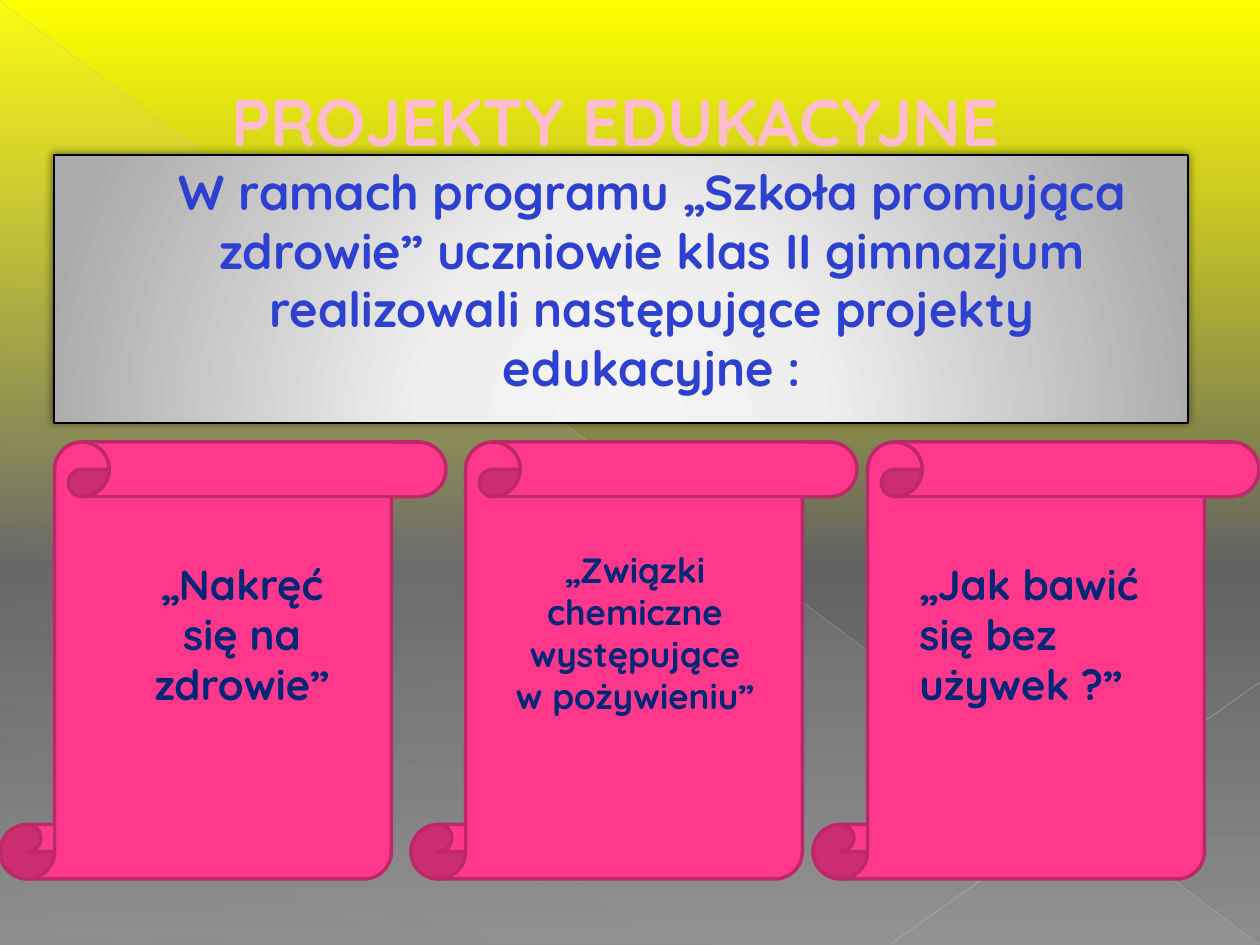
from dataclasses import dataclass

from pptx import Presentation, util as u
from pptx.dml.color import RGBColor
from pptx.enum import shapes, text
from pptx.oxml import parse_xml
from pptx.oxml.ns import nsdecls, qn

EMU_PER_PX = u.Inches(1) / 126
FONT = "Quicksand"
COLORS = {
    "title": "FFBCCE", "intro": "2D40CF", "label": "002776",
    "scroll": "FF388C", "scroll_edge": "BD2968", "black": "000000",
    "yellow": "FFFF00", "dark": "626262", "gray": "8C8C8C",
    "glow": "F4F4F4", "pale": "EFEFEF", "silver": "ABABAB",
    "wash": "D2D2D2", "ray": "BFBFBF", "ray_light": "C6C6C6",
}


@dataclass
class Box:
    left: int
    top: int
    width: int
    height: int

    def emu(self) -> tuple:
        return tuple(px(n) for n in (self.left, self.top, self.width, self.height))


@dataclass
class Stop:
    position: int
    color: str
    alpha: int = 100


@dataclass
class Project:
    scroll_left: int
    label: Box
    lines: list[str]
    size: int
    align: text.PP_ALIGN = text.PP_ALIGN.CENTER


@dataclass
class Ray:
    start: tuple[int, int]
    end: tuple[int, int]
    color: str
    alpha: int


RAYS = [
    Ray((0, 1), (1259, 944), "ray", 35),
    Ray((1260, 682), (891, 944), "ray_light", 45),
]
PROJECTS = [
    Project(0, Box(123, 552, 238, 165), ["„Nakręć się na zdrowie”"], 24),
    Project(411, Box(501, 542, 268, 224),
            ["„Związki chemiczne występujące", "w pożywieniu”"], 20),
    Project(813, Box(907, 552, 277, 165), ["„Jak bawić się bez używek ?”"], 24,
            text.PP_ALIGN.LEFT),
]


def px(length: int) -> u.Emu:
    return u.Emu(round(length * EMU_PER_PX))


def rgb(name: str) -> RGBColor:
    return RGBColor.from_string(COLORS[name])


def set_gradient(fill, properties, stops: list[Stop], direction: str) -> None:
    """Put a gradient in place of the fill held by the properties element."""
    fill.solid()
    fill.fore_color.rgb = rgb(stops[0].color)
    stop_xml = "".join(
        f'<a:gs pos="{stop.position * 1000}"><a:srgbClr val="{COLORS[stop.color]}">'
        f'<a:alpha val="{stop.alpha * 1000}"/></a:srgbClr></a:gs>' for stop in stops)
    gradient = parse_xml(f'<a:gradFill {nsdecls("a")} rotWithShape="1">'
                         f'<a:gsLst>{stop_xml}</a:gsLst>{direction}</a:gradFill>')
    solid = properties.find(qn("a:solidFill"))
    properties.replace(solid, gradient)


def linear(degrees: int) -> str:
    return f'<a:lin ang="{degrees * 60000}" scaled="0"/>'


def write(frame, lines: list[str], size: float, color: str,
          align=text.PP_ALIGN.CENTER) -> None:
    frame.word_wrap = True
    frame.text = "\n".join(lines)
    for paragraph in frame.paragraphs:
        paragraph.alignment = align
        for run in paragraph.runs:
            run.font.name = FONT
            run.font.size = u.Pt(size)
            run.font.bold = True
            run.font.color.rgb = rgb(color)


def add_shape(slide, kind, box: Box):
    shape = slide.shapes.add_shape(kind, *box.emu())
    shape.shadow.inherit = False
    return shape


def add_backdrop(slide) -> None:
    fill = slide.background.fill
    fill.solid()
    set_gradient(fill, slide.element.find(".//" + qn("p:bgPr")),
                 [Stop(0, "yellow"), Stop(60, "dark"), Stop(100, "gray")], linear(90))
    triangle = add_shape(slide, shapes.MSO_SHAPE.RIGHT_TRIANGLE, Box(1, 2, 1258, 942))
    set_gradient(triangle.fill, triangle.element.spPr,
                 [Stop(0, "wash", 10), Stop(70, "wash", 8), Stop(100, "wash", 1)],
                 linear(133))
    triangle.line.fill.background()
    for ray in RAYS:
        add_ray(slide, ray)


def add_ray(slide, ray: Ray) -> None:
    connector = slide.shapes.add_connector(
        shapes.MSO_CONNECTOR.STRAIGHT, *(px(n) for n in ray.start + ray.end))
    connector.line.width = u.Pt(0.4)
    connector.line.color.rgb = rgb(ray.color)
    properties = connector.element.spPr
    properties.find(".//" + qn("a:srgbClr")).append(
        parse_xml(f'<a:alpha {nsdecls("a")} val="{ray.alpha * 1000}"/>'))
    properties.append(parse_xml(f'<a:effectLst {nsdecls("a")}/>'))


def add_title(slide) -> None:
    title = slide.shapes.title
    title.left, title.top, title.width, title.height = Box(44, 66, 1142, 108).emu()
    write(title.text_frame, ["PROJEKTY EDUKACYJNE"], 37.8, "title")
    title.text_frame.vertical_anchor = text.MSO_ANCHOR.MIDDLE


def add_intro(slide) -> None:
    panel = add_shape(slide, shapes.MSO_SHAPE.RECTANGLE, Box(54, 155, 1134, 268))
    properties = panel.element.spPr
    set_gradient(panel.fill, properties,
                 [Stop(0, "glow"), Stop(34, "pale"), Stop(100, "silver")],
                 '<a:path path="circle"><a:fillToRect l="50000" t="155000" '
                 'r="50000" b="-55000"/></a:path>')
    panel.line.color.rgb = rgb("black")
    panel.line.width = u.Pt(0.75)
    properties.find(qn("a:effectLst")).append(parse_xml(
        f'<a:outerShdw {nsdecls("a")} blurRad="63500" dist="25400" dir="14700000">'
        f'<a:srgbClr val="{COLORS["black"]}"><a:alpha val="50000"/></a:srgbClr>'
        '</a:outerShdw>'))
    frame = panel.text_frame
    frame.vertical_anchor = text.MSO_ANCHOR.TOP
    frame.margin_left, frame.margin_right = px(94), px(32)
    write(frame, ["W ramach programu „Szkoła promująca zdrowie” uczniowie klas II "
                  "gimnazjum realizowali następujące projekty edukacyjne :"], 28, "intro")


def add_scroll(slide, left: int) -> None:
    scroll = add_shape(slide, shapes.MSO_SHAPE.VERTICAL_SCROLL, Box(left, 442, 446, 437))
    scroll.fill.solid()
    scroll.fill.fore_color.rgb = rgb("scroll")
    scroll.line.color.rgb = rgb("scroll_edge")
    scroll.line.width = u.Pt(2)


def add_label(slide, project: Project) -> None:
    label = slide.shapes.add_textbox(*project.label.emu())
    write(label.text_frame, project.lines, project.size, "label", project.align)


def main() -> None:
    presentation = Presentation()
    presentation.slide_width, presentation.slide_height = px(1260), px(945)
    slide = presentation.slides.add_slide(presentation.slide_layouts[5])
    add_backdrop(slide)
    add_title(slide)
    add_intro(slide)
    for project in PROJECTS:
        add_scroll(slide, project.scroll_left)
        add_label(slide, project)
    presentation.save("out.pptx")


if __name__ == "__main__":
    main()
